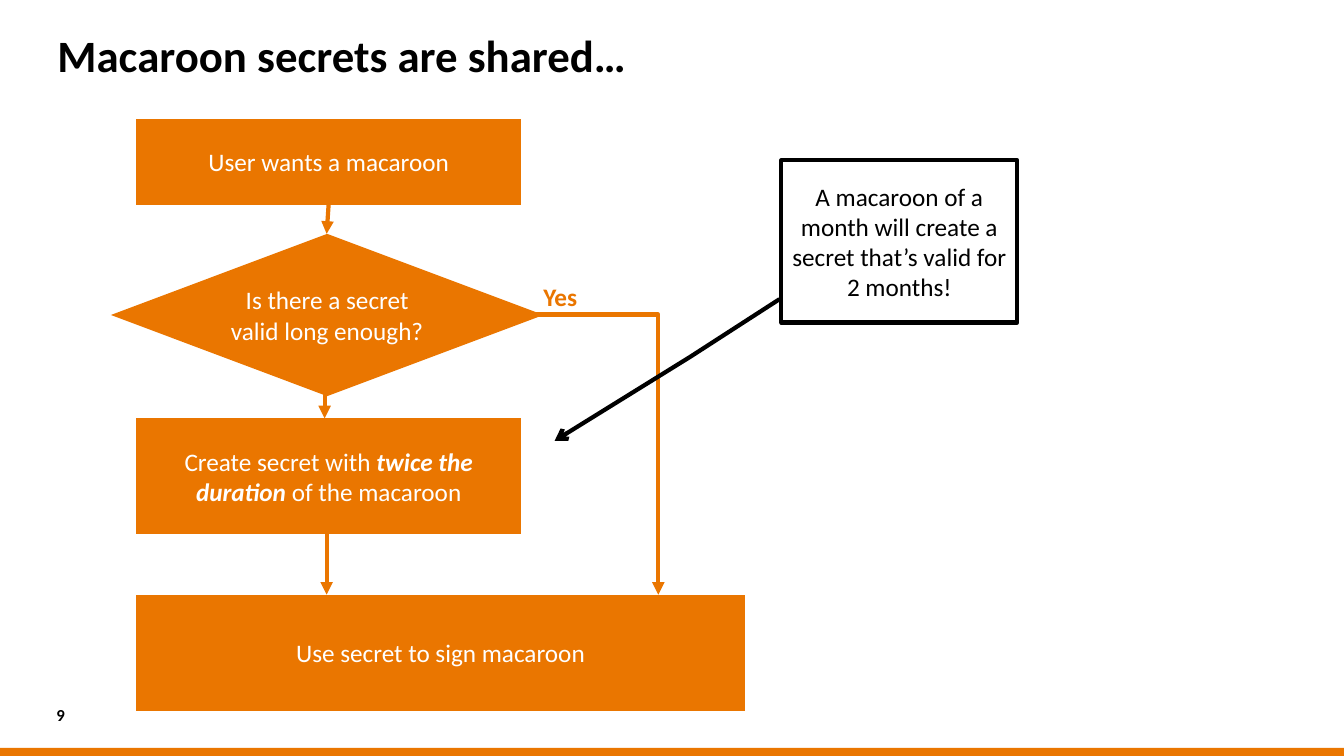
from lxml import etree
from pptx import Presentation
from pptx.dml.color import RGBColor
from pptx.enum import shapes, text
from pptx.oxml import ns
from pptx.util import Inches, Pt

ORANGE = RGBColor(0xEA, 0x76, 0x00)
BLACK = RGBColor(0, 0, 0)
WHITE = RGBColor(255, 255, 255)
KIND = shapes.MSO_SHAPE
LINK = shapes.MSO_CONNECTOR
MID = text.MSO_ANCHOR.MIDDLE


def write(shape, runs, color, size=18, align=text.PP_ALIGN.CENTER, anchor=MID, wrap=True):
    """Fill a shape with one paragraph of (words, font settings) runs."""
    frame = shape.text_frame
    frame.word_wrap = wrap
    frame.vertical_anchor = anchor
    para = frame.paragraphs[0]
    para.alignment = align
    for words, style in runs:
        run = para.add_run()
        run.text = words
        run.font.color.rgb = color
        for key, value in {"name": "Calibri", "size": Pt(size), **style}.items():
            setattr(run.font, key, value)
    return para


def label(slide, box, words, color, size, anchor=text.MSO_ANCHOR.TOP, wrap=True, top=0):
    """Add bold text without side insets."""
    shape = slide.shapes.add_textbox(*map(Inches, box))
    for side in ("left", "right", "top", "bottom"):
        setattr(shape.text_frame, f"margin_{side}", 0)
    shape.text_frame.margin_top = Inches(top)
    return write(shape, [(words, {"bold": True})], color, size,
                 text.PP_ALIGN.LEFT, anchor, wrap)


def block(slide, kind, box, fill=ORANGE):
    shape = slide.shapes.add_shape(kind, *map(Inches, box))
    shape.shadow.inherit = False
    if fill is None:
        shape.fill.background()
    else:
        shape.fill.solid()
        shape.fill.fore_color.rgb = fill
        shape.line.fill.background()
    return shape


def stroke(shape, color, tip):
    """Give a line its colour, width and arrow tip."""
    shape.line.color.rgb = color
    shape.line.width = Pt(3)
    etree.SubElement(shape.line._get_or_add_ln(), ns.qn("a:tailEnd"), type=tip)


def arrow(slide, start, end, kind=LINK.STRAIGHT):
    link = slide.shapes.add_connector(kind, *map(Inches, start + end))
    stroke(link, ORANGE, "triangle")
    props = link._element.spPr
    etree.SubElement(props, ns.qn("a:effectLst"))
    if kind == LINK.ELBOW:
        props.find(ns.qn("a:prstGeom")).set("prst", "bentConnector2")


def frame(slide, wide, high):
    """Add the title, page number and bottom bar."""
    bar = 0.08
    block(slide, KIND.RECTANGLE, (0, high - bar, wide, bar))
    title = label(slide, (0.57, 0.3, wide - 1.14, 0.66),
                  "Macaroon secrets are shared…", BLACK, 32, top=0.08)
    title.line_spacing = 0.8
    label(slide, (0.56, high - 0.53, 0.43, 0.24), "9", BLACK, 12, MID)


def flow(slide, x, y):
    """Draw the flow chart with its top left corner at x, y."""
    step, test = KIND.FLOWCHART_PROCESS, KIND.FLOWCHART_DECISION
    strong = {"bold": True, "italic": True}
    steps = [
        (test, (0, 1.14, 4.29, 1.61), [("Is there a secret valid long enough?", {})]),
        (step, (0.25, 0, 3.82, 0.85), [("User wants a macaroon", {})]),
        (step, (0.25, 2.97, 3.82, 1.15), [("Create secret with ", {}),
                                          ("twice the duration ", strong),
                                          ("of the macaroon", {})]),
        (step, (0.25, 4.72, 6.04, 1.15), [("Use secret to sign macaroon", {})]),
    ]
    for kind, (left, top, wide, high), runs in steps:
        write(block(slide, kind, (x + left, y + top, wide, high)), runs, WHITE)
    links = [
        (2.16, 0.84, 2.14, 1.14, LINK.STRAIGHT),
        (2.12, 2.68, 2.12, 2.97, LINK.STRAIGHT),
        (2.14, 4.01, 2.14, 4.72, LINK.STRAIGHT),
        (3.76, 1.94, 5.43, 4.72, LINK.ELBOW),
    ]
    for x1, y1, x2, y2, kind in links:
        arrow(slide, (x + x1, y + y1), (x + x2, y + y2), kind)
    label(slide, (x + 4.29, y + 1.61, 0.34, 0.3), "Yes", ORANGE, 18, wrap=False)


def callout(slide, box):
    note = block(slide, KIND.LINE_CALLOUT_2, box, None)
    for i, value in enumerate((0.856, -0.008, 1.211, -0.386, 1.729, -0.961)):
        note.adjustments[i] = value
    stroke(note, BLACK, "arrow")
    words = "A macaroon of a month will create a secret that’s valid for 2 months!"
    write(note, [(words, {})], BLACK)


def main():
    deck = Presentation()
    wide, high = 13.33, 7.5
    deck.slide_width, deck.slide_height = Inches(wide), Inches(high)
    slide = deck.slides.add_slide(deck.slide_layouts[6])
    frame(slide, wide, high)
    flow(slide, 1.1, 1.18)
    callout(slide, (7.75, 1.59, 2.34, 1.61))
    deck.save("out.pptx")


if __name__ == "__main__":
    main()
